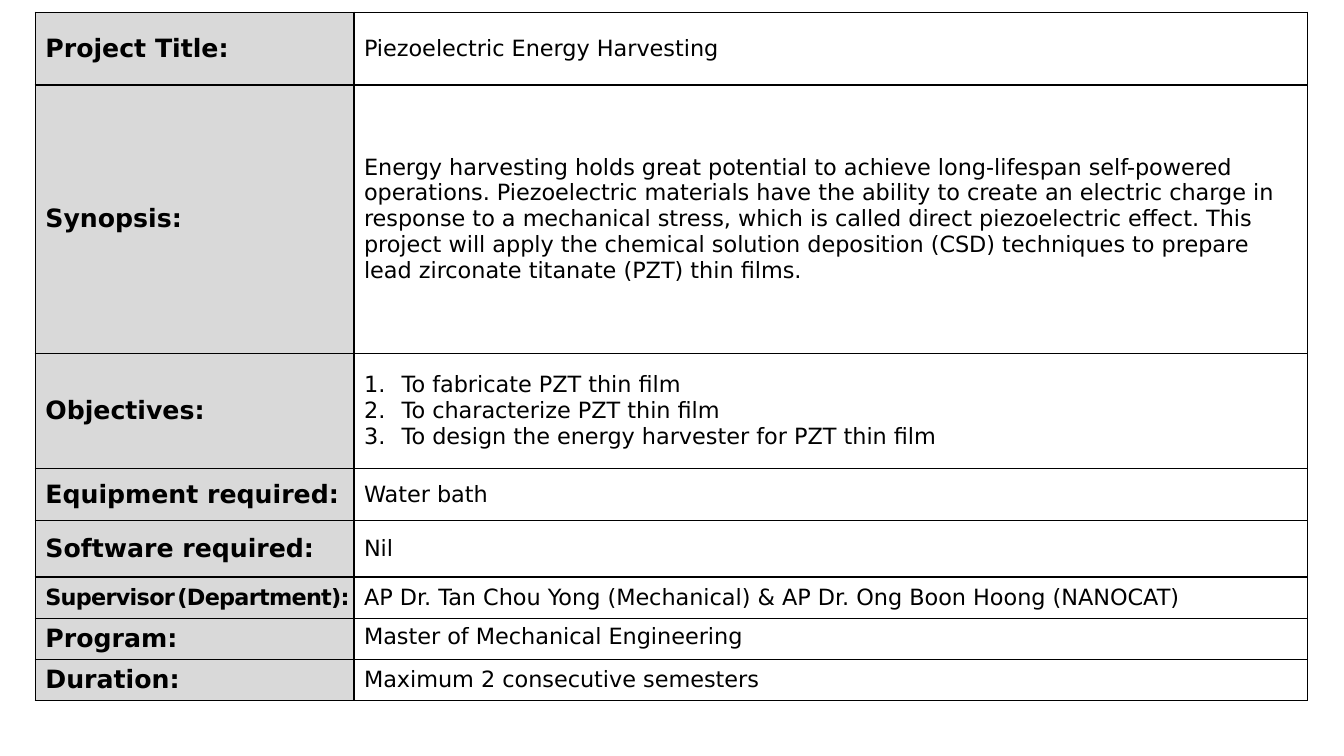
import pptx
import pptx.dml.color
import pptx.enum.text
import pptx.oxml.ns
import pptx.util
from lxml import etree

COLOURS = {"ink": "000000", "label": "D9D9D9", "paper": "FFFFFF"}
FONT = "DejaVu Sans"
COLUMN_WIDTHS = [8.03, 24.03]
ROW_HEIGHTS = [1.83, 6.76, 2.9, 1.32, 1.42, 1.04, 1.04, 1.04]
SYNOPSIS = (
    "Energy harvesting holds great potential to achieve long-lifespan self-powered operations. "
    "Piezoelectric materials have the ability to create an electric charge in response to a "
    "mechanical stress, which is called direct piezoelectric effect. This project will apply the "
    "chemical solution deposition (CSD) techniques to prepare lead zirconate titanate (PZT) thin films."
)
OBJECTIVES = [
    "To fabricate PZT thin film",
    "To characterize PZT thin film",
    "To design the energy harvester for PZT thin film",
]
SUPERVISOR_LABEL = [("Supervisor", 16), (" ", 5), ("(Department):", 16)]
DETAILS = [
    ("Project Title:", "Piezoelectric Energy Harvesting"),
    ("Synopsis:", SYNOPSIS),
    ("Objectives:", OBJECTIVES),
    ("Equipment required:", "Water bath"),
    ("Software required:", "Nil"),
    (SUPERVISOR_LABEL, "AP Dr. Tan Chou Yong (Mechanical) & AP Dr. Ong Boon Hoong (NANOCAT)"),
    ("Program:", "Master of Mechanical Engineering"),
    ("Duration:", "Maximum 2 consecutive semesters"),
]


def colour(name):
    return pptx.dml.color.RGBColor.from_string(COLOURS[name])


def add_xml(parent, tag, **attributes):
    element = etree.SubElement(parent, pptx.oxml.ns.qn(tag))
    for key, value in attributes.items():
        element.set(key, str(value))
    return element


def write(para, text, size=16, bold=False, spacing=None):
    span = para.add_run()
    span.text = text
    span.font.name = FONT
    span.font.size = pptx.util.Pt(size)
    span.font.bold = bold
    span.font.color.rgb = colour("ink")
    if spacing is not None:
        span.font._element.set("spc", str(round(spacing * 100)))


class ProjectSheet:
    def __init__(self, deck):
        self.page = deck.slides.add_slide(deck.slide_layouts[6])

    def table(self, left, top, widths, heights):
        frame = self.page.shapes.add_table(
            len(heights), len(widths), pptx.util.Cm(left), pptx.util.Cm(top),
            pptx.util.Cm(sum(widths)), pptx.util.Cm(sum(heights)))
        for column, width in zip(frame.table.columns, widths):
            column.width = pptx.util.Cm(width)
        for row, height in zip(frame.table.rows, heights):
            row.height = pptx.util.Cm(height)
        return frame.table

    def cell(self, cell, fill):
        cell.vertical_anchor = pptx.enum.text.MSO_ANCHOR.MIDDLE
        properties = cell._tc.get_or_add_tcPr()
        for side in "LRTB":
            line = add_xml(properties, f"a:ln{side}", w=pptx.util.Pt(1))
            add_xml(add_xml(line, "a:solidFill"), "a:srgbClr", val=COLOURS["ink"])
        cell.fill.solid()
        cell.fill.fore_color.rgb = colour(fill)

    def label(self, cell, content):
        self.cell(cell, "label")
        para = cell.text_frame.paragraphs[0]
        if isinstance(content, str):
            write(para, content, size=18, bold=True)
            return
        cell.margin_right = 0
        for text, size in content:
            write(para, text, size=size, bold=True, spacing=-0.5)

    def value(self, cell, content):
        self.cell(cell, "paper")
        if isinstance(content, str):
            write(cell.text_frame.paragraphs[0], content)
            return
        for index, item in enumerate(content):
            para = cell.text_frame.add_paragraph() if index else cell.text_frame.paragraphs[0]
            indent = pptx.util.Cm(0.95)
            properties = para._p.get_or_add_pPr()
            properties.set("marL", str(indent))
            properties.set("indent", str(-indent))
            add_xml(properties, "a:buFont", typeface="+mj-lt")
            add_xml(properties, "a:buAutoNum", type="arabicPeriod")
            write(para, item)


def main():
    deck = pptx.Presentation()
    deck.slide_width = pptx.util.Cm(33.87)
    deck.slide_height = pptx.util.Cm(19.05)
    sheet = ProjectSheet(deck)
    table = sheet.table(0.89, 0.31, COLUMN_WIDTHS, ROW_HEIGHTS)
    for row, (label, value) in enumerate(DETAILS):
        sheet.label(table.cell(row, 0), label)
        sheet.value(table.cell(row, 1), value)
    program_row = [label for label, _ in DETAILS].index("Program:")
    table.cell(program_row, 1).vertical_anchor = pptx.enum.text.MSO_ANCHOR.TOP
    deck.save("out.pptx")


if __name__ == "__main__":
    main()
